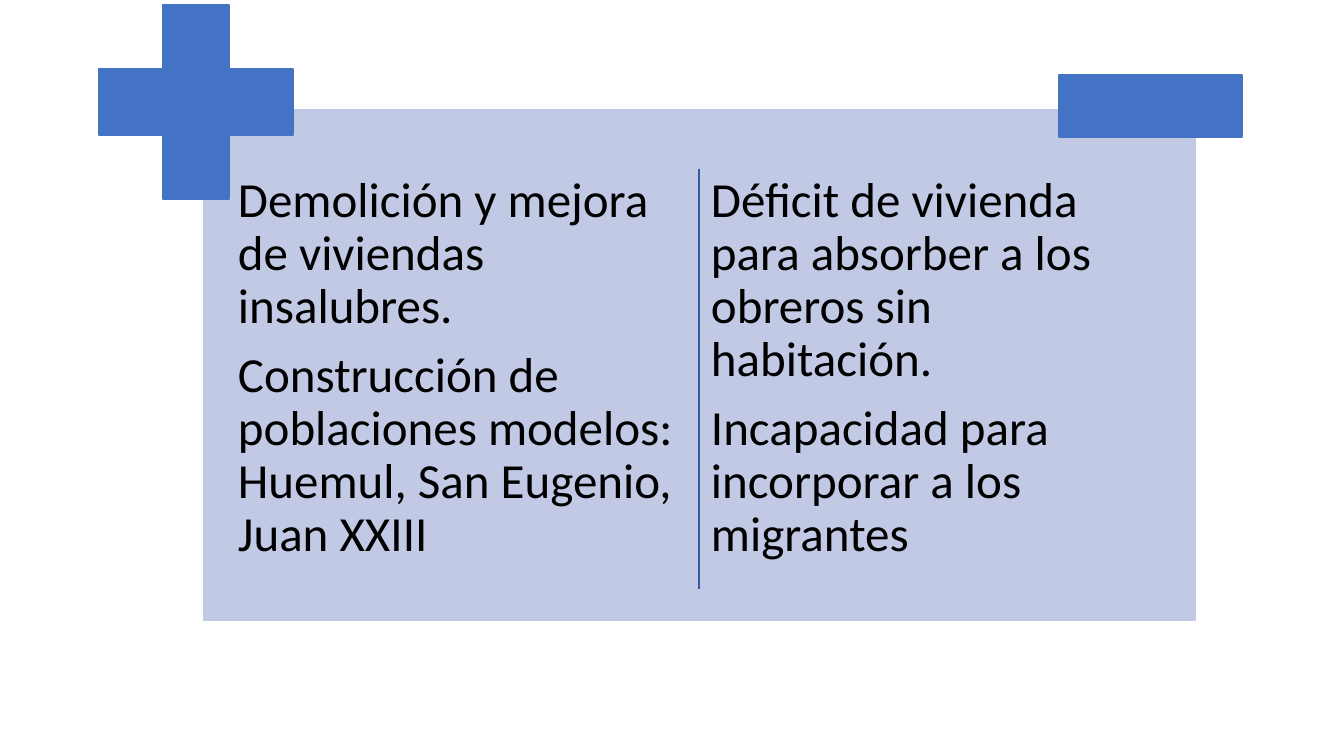
from pptx import Presentation
from pptx.dml.color import RGBColor
from pptx.enum.shapes import MSO_CONNECTOR, MSO_SHAPE
from pptx.enum.text import MSO_ANCHOR, PP_ALIGN
from pptx.oxml.ns import qn
from pptx.util import Pt
from lxml import etree

RECT = MSO_SHAPE.RECTANGLE
CROSS = MSO_SHAPE.CROSS
STRAIGHT = MSO_CONNECTOR.STRAIGHT
TOP = MSO_ANCHOR.TOP
LEFT = PP_ALIGN.LEFT

EMU_PER_PX = 914400 / 100.8
BLUE = "4472C4"
PANEL = "C1C9E4"
DIVIDER = "365B9D"
WHITE = "FFFFFF"
BLACK = "000000"

ADVANTAGES = [
    "Demolición y mejora de viviendas insalubres.",
    "Construcción de poblaciones modelos: Huemul, San Eugenio, Juan XXIII",
]
DRAWBACKS = [
    "Déficit de vivienda para absorber a los obreros sin habitación.",
    "Incapacidad para incorporar a los migrantes",
]


def px(n):
    return round(n * EMU_PER_PX)


def color(hex_code):
    return RGBColor.from_string(hex_code)


def add_block(slide, kind, x, y, w, h, fill, line):
    sp = slide.shapes.add_shape(kind, px(x), px(y), px(w), px(h))
    sp.shadow.inherit = False
    sp.fill.solid()
    sp.fill.fore_color.rgb = color(fill)
    sp.line.color.rgb = color(line)
    sp.line.width = Pt(1)
    return sp


def add_column(slide, x, y, w, h, paragraphs):
    tf = slide.shapes.add_textbox(px(x), px(y), px(w), px(h)).text_frame
    tf.word_wrap = True
    tf.vertical_anchor = TOP
    tf.margin_left = tf.margin_right = px(7)
    tf.margin_top = tf.margin_bottom = px(7)
    tf.text = "\n".join(paragraphs)
    for p in tf.paragraphs:
        p.alignment = LEFT
        p.line_spacing = 0.9
        p.space_after = Pt(12)
        font = p.runs[0].font
        font.name = "Calibri"
        font.size = Pt(35)
        font.color.rgb = color(BLACK)


def add_divider(slide, x, top, bottom):
    line = slide.shapes.add_connector(STRAIGHT, px(x), px(top), px(x), px(bottom))
    line.line.color.rgb = color(DIVIDER)
    line.line.width = Pt(1)
    etree.SubElement(line._element.spPr, qn("a:effectLst"))


def main():
    prs = Presentation()
    prs.slide_width, prs.slide_height = px(1344), px(756)
    slide = prs.slides.add_slide(prs.slide_layouts[6])

    # Panel with the two columns
    add_block(slide, RECT, 202, 108, 995, 514, PANEL, WHITE)
    for x, paragraphs in ((231, ADVANTAGES), (704, DRAWBACKS)):
        add_column(slide, x, 168, 462, 439, paragraphs)

    # Plus and minus signs
    plus = add_block(slide, CROSS, 99, 5, 194, 194, BLUE, BLUE)
    plus.adjustments[0] = 0.33
    add_block(slide, RECT, 1059, 75, 183, 62, BLUE, BLUE)

    # Line between the columns
    add_divider(slide, 699, 169, 589)

    prs.save("out.pptx")


if __name__ == "__main__":
    main()
